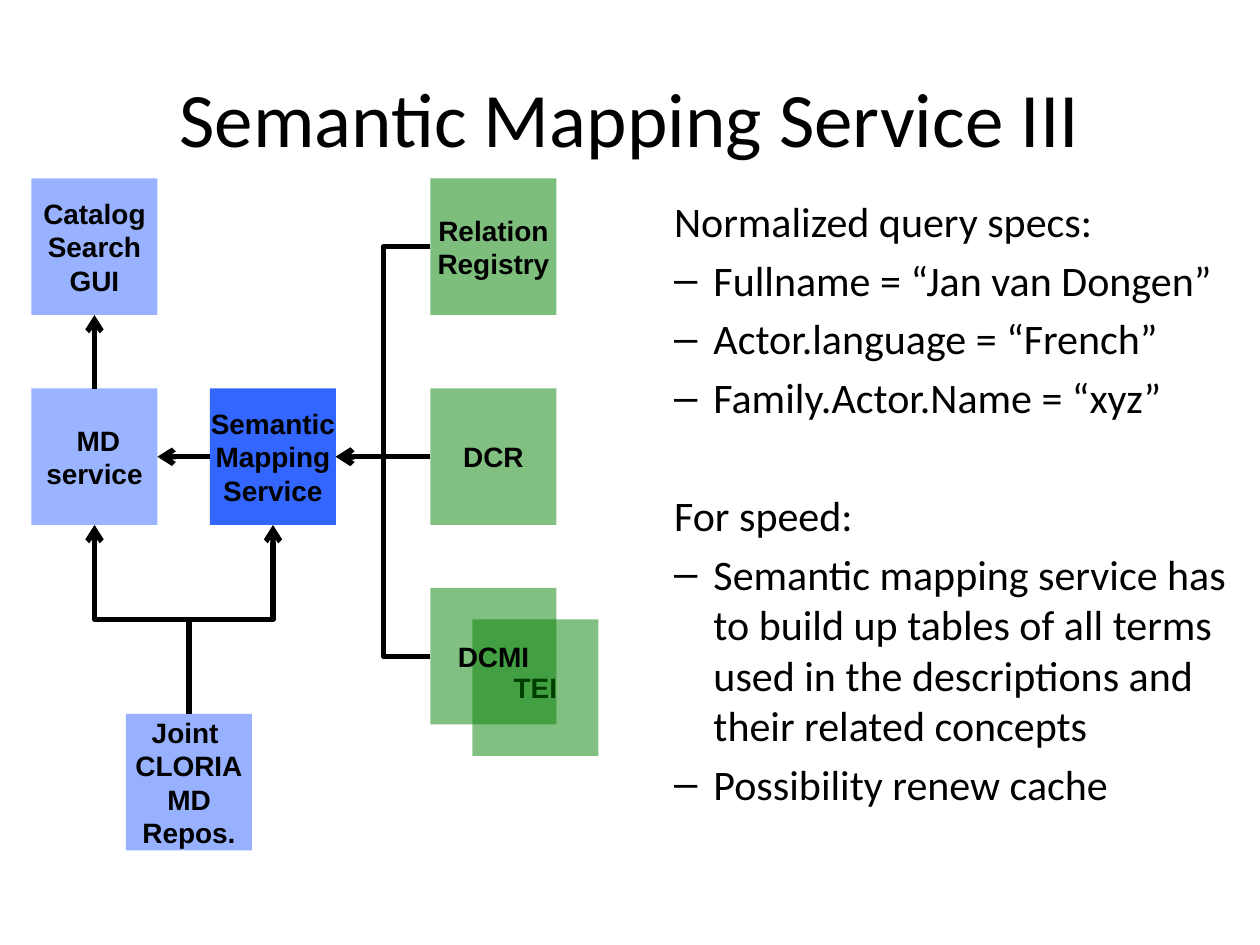
from lxml import etree
from pptx import Presentation
from pptx.dml.color import RGBColor
from pptx.enum import shapes, text
from pptx.oxml import ns
from pptx.util import Pt

COLORS = {"ink": "000000", "service": "3366FF", "registry": "008000"}
BOX_WIDTH, BOX_HEIGHT = 72, 78
BOX_FRAME = {
    "word_wrap": True,
    "vertical_anchor": text.MSO_ANCHOR.MIDDLE,
    "margin_left": 0,
    "margin_right": 0,
    "margin_top": Pt(3.6),
    "margin_bottom": Pt(3.6),
}
BOX_FONT = {"name": "Arial", "size": Pt(16), "bold": True}
TITLE_FONT = {"name": "Calibri", "size": Pt(44)}
BODY_FONT = {"name": "Calibri", "size": Pt(24)}

BOXES = {
    "md": (18, 222, "service", 49, " MD\nservice"),
    "mapping": (120, 222, "service", 100, "Semantic\nMapping\nService"),
    "relation": (246, 102, "registry", 51, "Relation\nRegistry"),
    "catalog": (18, 102, "service", 50, "Catalog\nSearch\nGUI"),
    "repos": (72, 408, "service", 51, "Joint \nCLORIA\vMD Repos."),
    "dcr": (246, 222, "registry", 49, "DCR"),
    "tei": (270, 354, "registry", 49, "TEI"),
    "dcmi": (246, 336, "registry", 49, "DCMI"),
}
FLOWS_LEFT = [("relation", "mapping"), ("dcr", "mapping"),
              ("dcmi", "mapping"), ("mapping", "md")]
FLOWS_UP = [("md", "catalog"), ("repos", "md"), ("repos", "mapping")]

NOTES = [
    ("Normalized query specs:", [
        "Fullname = “Jan van Dongen”",
        "Actor.language = “French”",
        "Family.Actor.Name = “xyz”",
    ]),
    ("For speed:", [
        "Semantic mapping service has to build up tables of all terms "
        "used in the descriptions and their related concepts",
        "Possibility renew cache",
    ]),
]


def apply(target, values):
    for key, value in values.items():
        setattr(target, key, value)


def color(key):
    return RGBColor.from_string(COLORS[key])


def style_font(font, values):
    apply(font, values)
    font.color.rgb = color("ink")


def place(target, left, top, width, height):
    apply(target, {"left": Pt(left), "top": Pt(top),
                   "width": Pt(width), "height": Pt(height)})


def add_box(slide, left, top, fill, opacity, label):
    box = slide.shapes.add_shape(
        shapes.MSO_SHAPE.RECTANGLE,
        Pt(left), Pt(top), Pt(BOX_WIDTH), Pt(BOX_HEIGHT))
    box.shadow.inherit = False
    box.line.fill.background()
    box.fill.solid()
    box.fill.fore_color.rgb = color(fill)
    if opacity < 100:
        tint = box.fill._xPr.find(".//" + ns.qn("a:srgbClr"))
        etree.SubElement(tint, ns.qn("a:alpha"), val=str(opacity * 1000))
    apply(box.text_frame, BOX_FRAME)
    box.text_frame.text = label
    for line in box.text_frame.paragraphs:
        line.alignment = text.PP_ALIGN.CENTER
        for run in line.runs:
            style_font(run.font, BOX_FONT)


def add_arrow(slide, start, end):
    arrow = slide.shapes.add_connector(
        shapes.MSO_CONNECTOR.ELBOW, *(Pt(value) for value in start + end))
    arrow.line.width = Pt(3)
    arrow.line.color.rgb = color("ink")
    properties = arrow._element.spPr
    etree.SubElement(properties.find(ns.qn("a:ln")),
                     ns.qn("a:tailEnd"), type="arrow")
    etree.SubElement(properties, ns.qn("a:effectLst"))
    return arrow


def add_left_flow(slide, source, target):
    (x1, y1), (x2, y2) = BOXES[source][:2], BOXES[target][:2]
    middle = BOX_HEIGHT / 2
    add_arrow(slide, (x1, y1 + middle), (x2 + BOX_WIDTH, y2 + middle))


def add_up_flow(slide, source, target):
    (x1, y1), (x2, y2) = BOXES[source][:2], BOXES[target][:2]
    run, rise = x2 - x1, y1 - y2 - BOX_HEIGHT
    center_x = (x1 + x2 + BOX_WIDTH) / 2
    center_y = y1 - rise / 2
    arrow = add_arrow(slide,
                      (center_x - rise / 2, center_y - run / 2),
                      (center_x + rise / 2, center_y + run / 2))
    arrow._element.spPr.find(ns.qn("a:xfrm")).set("rot", str(270 * 60000))


def add_note(frame, wording, first=False):
    note = frame.paragraphs[0] if first else frame.add_paragraph()
    note.level = 1
    note.text = wording
    style_font(note.runs[0].font, BODY_FONT)
    return note


def fill_notes(body):
    place(body, 342, 108, 378, 408)
    frame = body.text_frame
    frame.auto_size = text.MSO_AUTO_SIZE.NONE
    for index, (heading, items) in enumerate(NOTES):
        lead = add_note(frame, heading, first=index == 0)
        if index:
            lead.space_before = Pt(38.5)
        etree.SubElement(lead._p.get_or_add_pPr(), ns.qn("a:buNone"))
        for item in items:
            add_note(frame, item)


def main():
    deck = Presentation()
    apply(deck, {"slide_width": Pt(720), "slide_height": Pt(540)})
    slide = deck.slides.add_slide(deck.slide_layouts[1])
    title, body = slide.placeholders
    place(title, 36, 21.6, 648, 90)
    title.text_frame.text = "Semantic Mapping Service III"
    style_font(title.text_frame.paragraphs[0].runs[0].font, TITLE_FONT)
    fill_notes(body)
    for box in BOXES.values():
        add_box(slide, *box)
    for flow in FLOWS_LEFT:
        add_left_flow(slide, *flow)
    for flow in FLOWS_UP:
        add_up_flow(slide, *flow)
    deck.save("out.pptx")


if __name__ == "__main__":
    main()
